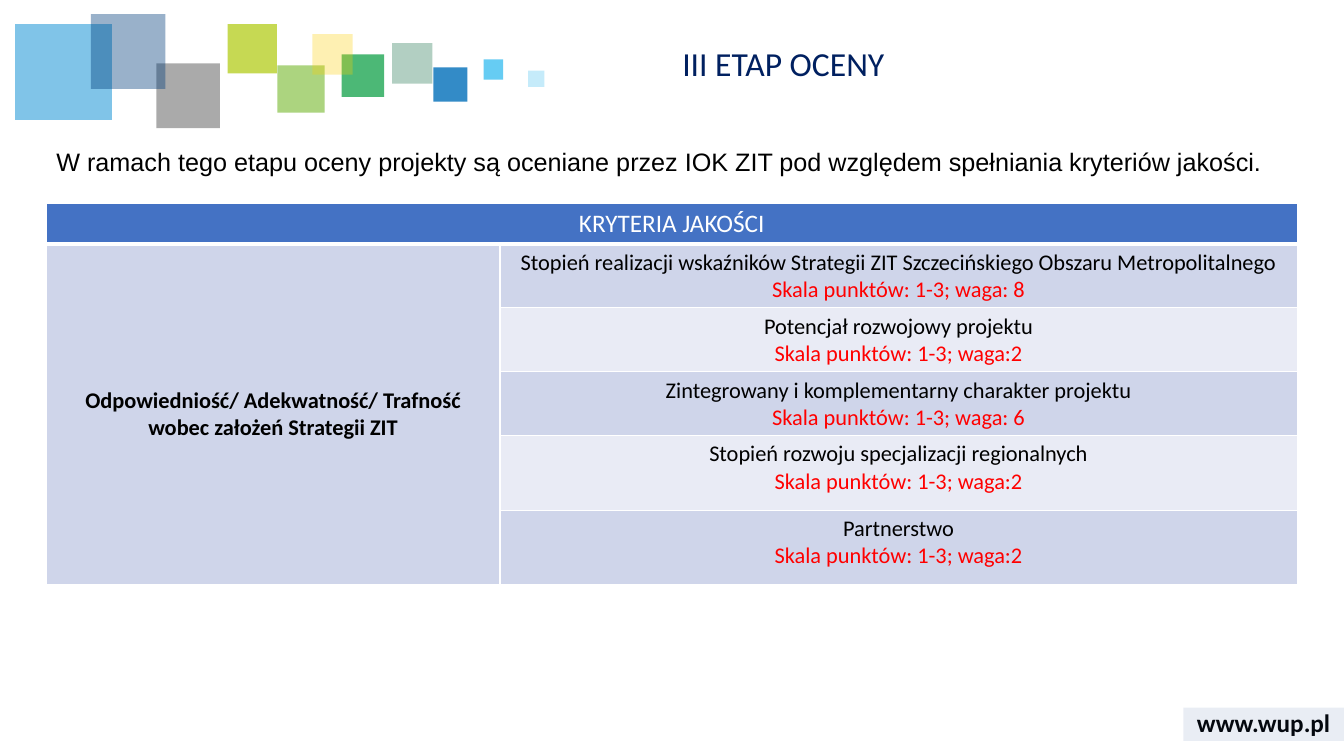
"""Build the slide presenting the quality criteria of the third assessment stage."""
from dataclasses import dataclass

import lxml.etree
import pptx
import pptx.dml.color
import pptx.enum.shapes
import pptx.enum.text
import pptx.oxml.ns
import pptx.util

Cm = pptx.util.Cm
Pt = pptx.util.Pt
CENTER = pptx.enum.text.PP_ALIGN.CENTER
LEFT = pptx.enum.text.PP_ALIGN.LEFT
TOP = pptx.enum.text.MSO_ANCHOR.TOP
MIDDLE = pptx.enum.text.MSO_ANCHOR.MIDDLE


@dataclass(frozen=True)
class Box:
    left: float
    top: float
    width: float
    height: float

    def lengths(self) -> tuple:
        return Cm(self.left), Cm(self.top), Cm(self.width), Cm(self.height)


@dataclass(frozen=True)
class Tile:
    box: Box
    color: str
    opacity: int


@dataclass(frozen=True)
class Style:
    size: int
    color: str = "000000"
    font: str = "Calibri"
    bold: bool = False


@dataclass(frozen=True)
class Criterion:
    name: str
    scale: str
    row_height: float
    fill: str


TILES = [
    Tile(Box(9.88, 1.09, 1.02, 1.02), "006138", 30),
    Tile(Box(10.92, 1.7, 0.86, 0.86), "006EB9", 80),
    Tile(Box(8.61, 1.37, 1.07, 1.07), "009A3C", 70),
    Tile(Box(0.38, 0.61, 2.44, 2.41), "028BD3", 50),
    Tile(Box(6.99, 1.65, 1.19, 1.19), "75B82A", 60),
    Tile(Box(3.94, 1.6, 1.6, 1.63), "575757", 50),
    Tile(Box(2.29, 0.36, 1.88, 1.88), "003D7C", 40),
    Tile(Box(12.19, 1.5, 0.49, 0.51), "40C0F1", 80),
    Tile(Box(5.74, 0.61, 1.24, 1.24), "AFCA0B", 70),
    Tile(Box(7.87, 0.86, 1.02, 1.02), "FED000", 30),
    Tile(Box(13.31, 1.78, 0.41, 0.41), "40C0F1", 30),
]
ADDRESS_BAND = Tile(Box(29.82, 17.83, 4.05, 0.84), "2F5597", 10)

DARK_ROW, LIGHT_ROW = "CFD5EA", "E9EBF5"
CRITERIA = [
    Criterion("Stopień realizacji wskaźników Strategii ZIT Szczecińskiego Obszaru Metropolitalnego",
              "Skala punktów: 1-3; waga: 8", 1.52, DARK_ROW),
    Criterion("Potencjał rozwojowy projektu", "Skala punktów: 1-3; waga:2", 1.52, LIGHT_ROW),
    Criterion("Zintegrowany i komplementarny charakter projektu",
              "Skala punktów: 1-3; waga: 6", 1.52, DARK_ROW),
    Criterion("Stopień rozwoju specjalizacji regionalnych",
              "Skala punktów: 1-3; waga:2", 1.88, LIGHT_ROW),
    Criterion("Partnerstwo", "Skala punktów: 1-3; waga:2", 1.88, DARK_ROW),
]
HEADER_HEIGHT = 0.97
COLUMN_WIDTHS = (11.43, 20.09)
HEADER_STYLE = Style(18, "FFFFFF")
GROUP_STYLE = Style(16, bold=True)
NAME_STYLE = Style(16)
SCALE_STYLE = Style(16, "FF0000")


def rgb(color: str) -> pptx.dml.color.RGBColor:
    return pptx.dml.color.RGBColor.from_string(color)


def write(text_frame, lines: list[tuple[str, Style]], alignment) -> None:
    text_frame.text = "\n".join(text for text, _ in lines)
    for paragraph, (_, style) in zip(text_frame.paragraphs, lines):
        paragraph.alignment = alignment
        for run in paragraph.runs:
            run.font.name = style.font
            run.font.size = Pt(style.size)
            run.font.bold = style.bold
            run.font.color.rgb = rgb(style.color)


def add_tile(shapes, tile: Tile) -> None:
    shape = shapes.add_shape(pptx.enum.shapes.MSO_SHAPE.RECTANGLE, *tile.box.lengths())
    shape.shadow.inherit = False
    shape.line.fill.background()
    shape.fill.solid()
    shape.fill.fore_color.rgb = rgb(tile.color)
    color = shape.fill._xPr.find(".//" + pptx.oxml.ns.qn("a:srgbClr"))
    alpha = lxml.etree.SubElement(color, pptx.oxml.ns.qn("a:alpha"))
    alpha.set("val", str(tile.opacity * 1000))


def add_text(slide, box: Box, text: str, style: Style, alignment, anchor) -> None:
    text_frame = slide.shapes.add_textbox(*box.lengths()).text_frame
    text_frame.word_wrap = True
    text_frame.vertical_anchor = anchor
    write(text_frame, [(text, style)], alignment)


def format_title(slide) -> None:
    title = slide.shapes.title
    title.left, title.top, title.width, title.height = Box(16.94, 1.07, 16.15, 1.4).lengths()
    text_frame = title.text_frame
    text_frame.word_wrap = True
    text_frame.auto_size = pptx.enum.text.MSO_AUTO_SIZE.NONE
    text_frame.vertical_anchor = TOP
    write(text_frame, [("III ETAP OCENY", Style(24, "002060"))], LEFT)
    text_frame.paragraphs[0].line_spacing = 0.9


def format_cell(cell, fill: str, bottom_width: int = 1) -> None:
    properties = cell._tc.get_or_add_tcPr()
    for side, width in (("L", 1), ("R", 1), ("T", 1), ("B", bottom_width)):
        line = lxml.etree.SubElement(properties, pptx.oxml.ns.qn(f"a:ln{side}"))
        line.set("w", str(Pt(width)))
        solid = lxml.etree.SubElement(line, pptx.oxml.ns.qn("a:solidFill"))
        lxml.etree.SubElement(solid, pptx.oxml.ns.qn("a:srgbClr")).set("val", "FFFFFF")
    cell.fill.solid()
    cell.fill.fore_color.rgb = rgb(fill)


def add_criteria_table(slide) -> None:
    row_heights = [HEADER_HEIGHT] + [criterion.row_height for criterion in CRITERIA]
    box = Box(1.17, 5.13, sum(COLUMN_WIDTHS), sum(row_heights))
    table = slide.shapes.add_table(len(row_heights), len(COLUMN_WIDTHS), *box.lengths()).table
    for column, width in zip(table.columns, COLUMN_WIDTHS):
        column.width = Cm(width)
    for row, height in zip(table.rows, row_heights):
        row.height = Cm(height)

    header, group = table.cell(0, 0), table.cell(1, 0)
    header.merge(table.cell(0, 1))
    group.merge(table.cell(len(CRITERIA), 0))
    for cell in table.rows[0].cells:
        format_cell(cell, "4472C4", bottom_width=3)
    write(header.text_frame, [("KRYTERIA JAKOŚCI", HEADER_STYLE)], CENTER)

    for row, criterion in enumerate(CRITERIA, start=1):
        format_cell(table.cell(row, 0), DARK_ROW)
        cell = table.cell(row, 1)
        format_cell(cell, criterion.fill)
        lines = [(criterion.name, NAME_STYLE), (criterion.scale, SCALE_STYLE)]
        write(cell.text_frame, lines, CENTER)
    group.vertical_anchor = MIDDLE
    group_name = "Odpowiedniość/ Adekwatność/ Trafność wobec założeń Strategii ZIT"
    write(group.text_frame, [(group_name, GROUP_STYLE)], CENTER)


def main() -> None:
    presentation = pptx.Presentation()
    presentation.slide_width, presentation.slide_height = Cm(33.87), Cm(19.05)
    slide = presentation.slides.add_slide(presentation.slide_layouts.get_by_name("Title Only"))
    add_text(slide, Box(29.82, 17.7, 4.05, 1.02), "www.wup.pl",
             Style(18, bold=True), CENTER, MIDDLE)
    mosaic = slide.shapes.add_group_shape()
    for tile in TILES:
        add_tile(mosaic.shapes, tile)
    add_tile(slide.shapes, ADDRESS_BAND)
    add_criteria_table(slide)
    add_text(slide, Box(1.17, 3.56, 31.52, 1.02),
             "W ramach tego etapu oceny projekty są oceniane przez IOK ZIT "
             "pod względem spełniania kryteriów jakości.",
             Style(18, font="Arial"), LEFT, TOP)
    format_title(slide)
    presentation.save("out.pptx")


if __name__ == "__main__":
    main()
